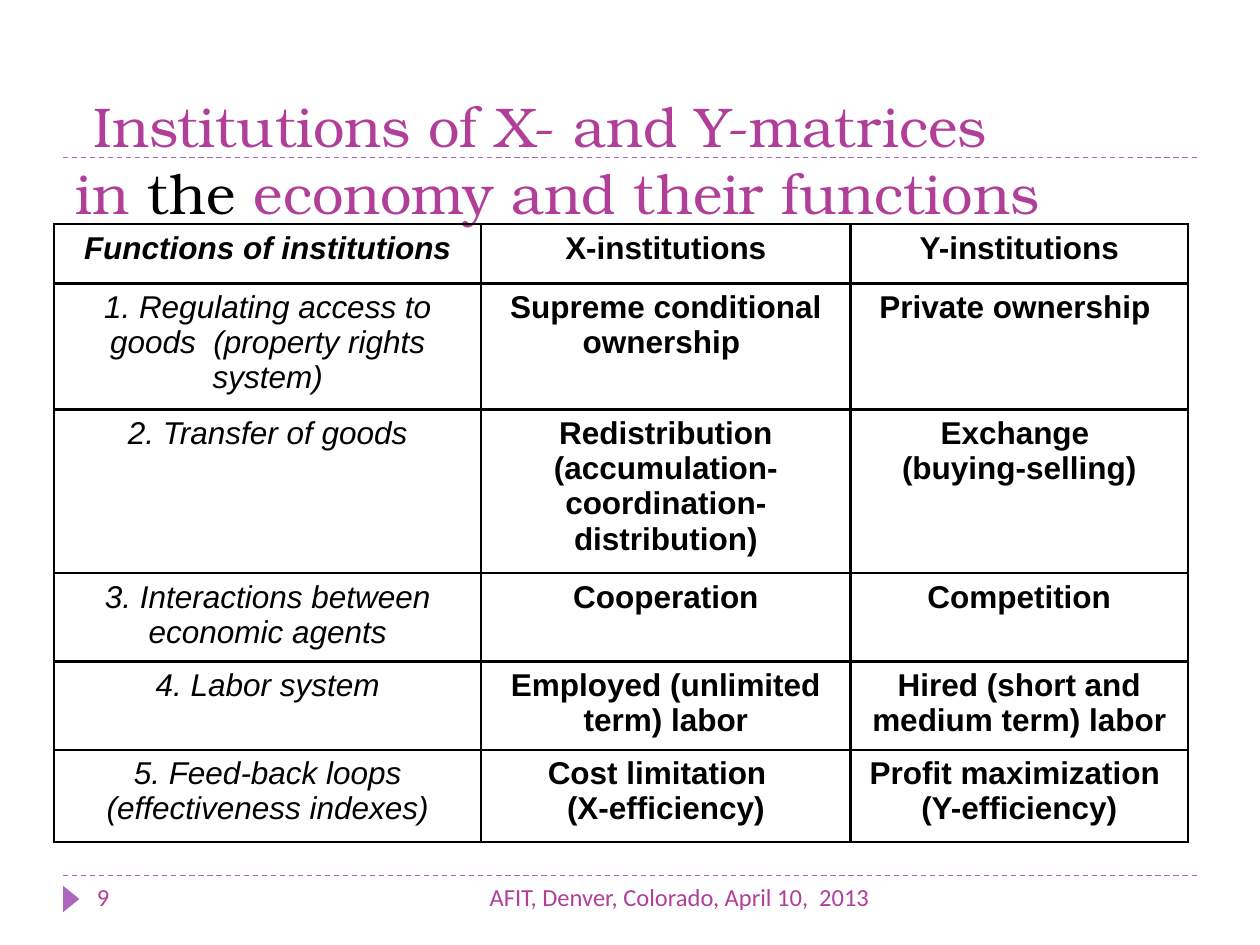
from lxml import etree
from pptx import Presentation
from pptx.dml.color import RGBColor
from pptx.enum.dml import MSO_LINE_DASH_STYLE as Dash
from pptx.enum.shapes import MSO_CONNECTOR as Connector, MSO_SHAPE as Shape
from pptx.enum.text import MSO_ANCHOR as Anchor, PP_ALIGN as Align
from pptx.oxml.ns import qn
from pptx.util import Inches, Pt

COLUMNS, ROWS = 100, 75
MAGENTA, VIOLET, BLACK = "B13F9A", "AC66BB", "000000"


def rgb(code):
    return RGBColor.from_string(code)


class Deck:
    title_font, small_font, table_font = "TeX Gyre Bonum", "Calibri", "Arial"

    def __init__(self):
        self.show = Presentation()
        self.show.slide_width, self.show.slide_height = Inches(10), Inches(7.5)
        self.slide = self.show.slides.add_slide(self.show.slide_layouts[5])
        self.shapes = self.slide.shapes

    def col(self, count):
        return round(self.show.slide_width * count / COLUMNS)

    def row(self, count):
        return round(self.show.slide_height * count / ROWS)

    def box(self, left, top, width, height):
        return self.col(left), self.row(top), self.col(width), self.row(height)

    def run(self, paragraph, text, font, size, color, bold=False, italic=False):
        run = paragraph.add_run()
        run.text = text
        run.font.name, run.font.size = font, Pt(size)
        run.font.bold, run.font.italic = bold, italic
        run.font.color.rgb = rgb(color)

    def title(self, place, lines):
        heading = self.shapes.title
        heading.left, heading.top, heading.width, heading.height = self.box(*place)
        frame = heading.text_frame
        frame.word_wrap, frame.vertical_anchor = True, Anchor.BOTTOM
        paragraph = frame.paragraphs[0]
        paragraph.alignment = Align.LEFT
        for index, line in enumerate(lines):
            if index:
                paragraph.add_line_break()
            for text, color in line:
                self.run(paragraph, text, self.title_font, 32, color)

    def note(self, place, text, align):
        frame = self.shapes.add_textbox(*self.box(*place)).text_frame
        frame.word_wrap = True
        frame.paragraphs[0].alignment = align
        self.run(frame.paragraphs[0], text, self.small_font, 14, MAGENTA)

    def rule(self, left, right, top):
        rule = self.shapes.add_connector(
            Connector.STRAIGHT, self.col(left), self.row(top), self.col(right), self.row(top))
        rule.line.color.rgb = rgb(VIOLET)
        rule.line.width, rule.line.dash_style = Pt(0.75), Dash.DASH
        etree.SubElement(rule._element.spPr, qn("a:effectLst"))

    def marker(self, place):
        marker = self.shapes.add_shape(Shape.ISOSCELES_TRIANGLE, *self.box(*place))
        marker.rotation = 90
        marker.shadow.inherit = False
        marker.fill.solid()
        marker.fill.fore_color.rgb = rgb(VIOLET)
        marker.line.fill.background()

    def borders(self, cell):
        properties = cell._tc.get_or_add_tcPr()
        for index, side in enumerate(("lnL", "lnR", "lnT", "lnB")):
            edge = etree.Element(qn(f"a:{side}"), w=str(Pt(1.5)))
            fill = etree.SubElement(edge, qn("a:solidFill"))
            etree.SubElement(fill, qn("a:srgbClr"), val=BLACK)
            properties.insert(index, edge)

    def table(self, left, top, widths, heights, content):
        place = self.box(left, top, sum(widths), sum(heights))
        table = self.shapes.add_table(len(heights), len(widths), *place).table
        for column, width in zip(table.columns, widths):
            column.width = self.col(width)
        for line, height in zip(table.rows, heights):
            line.height = self.row(height)
        for r, texts in enumerate(content):
            for c, text in enumerate(texts):
                cell = table.cell(r, c)
                cell.fill.background()
                self.borders(cell)
                for index, part in enumerate(text.split("\n")):
                    frame = cell.text_frame
                    paragraph = frame.add_paragraph() if index else frame.paragraphs[0]
                    paragraph.alignment = Align.CENTER
                    self.run(paragraph, part, self.table_font, 18, BLACK,
                             bold=r == 0 or c > 0, italic=c == 0)


INSTITUTIONS = [
    ("Functions of institutions", "X-institutions", "Y-institutions"),
    ("1. Regulating access to goods  (property rights system)",
     "Supreme conditional ownership ", "Private ownership "),
    ("2. Transfer of goods",
     "Redistribution (accumulation-coordination-distribution)",
     "Exchange \n(buying-selling)"),
    ("3. Interactions between economic agents", "Cooperation", "Competition"),
    ("4. Labor system", "Employed (unlimited term) labor",
     "Hired (short and medium term) labor"),
    ("5. Feed-back loops (effectiveness indexes)",
     "Cost limitation  \n(Х-efficiency)", "Profit maximization \n(Y-efficiency)"),
]


def main():
    deck = Deck()
    for top in (69.5, 12.5):
        deck.rule(5, 95, top)
    deck.marker((4.6, 70.7, 2.1, 1.3))
    deck.title((5, 2.7, 91.7, 15.7), [
        [(" Institutions of X- and Y-matrices ", MAGENTA)],
        [("in ", MAGENTA), ("the ", BLACK), ("economy and their functions", MAGENTA)],
    ])
    deck.note((31.7, 69.5, 38.3, 4), "AFIT, Denver, Colorado, April 10,  2013", Align.RIGHT)
    deck.note((6.7, 69.5, 21.7, 4), "9", Align.LEFT)
    deck.table(4.3, 17.8, (33.9, 29.3, 26.8), (4.7, 6.7, 11.2, 6.9, 5.4, 7.3), INSTITUTIONS)
    deck.show.save("out.pptx")


if __name__ == "__main__":
    main()
